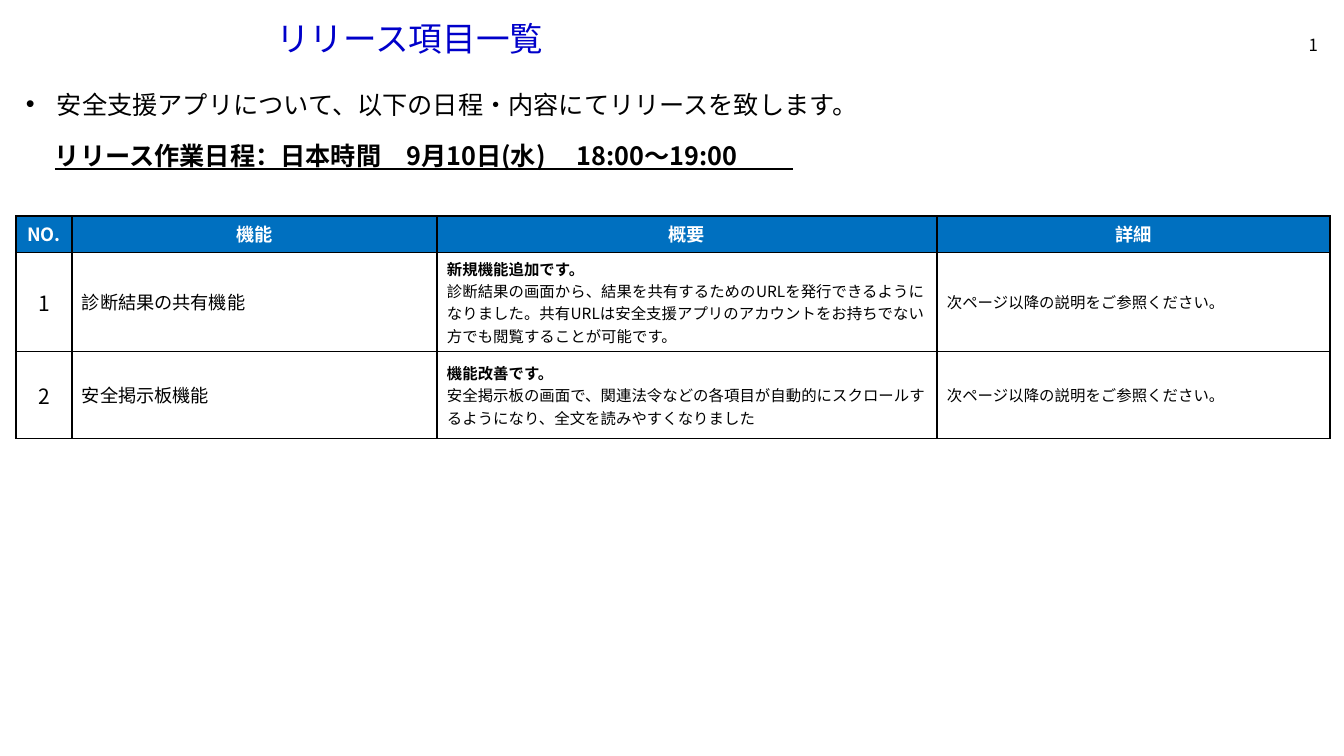
from lxml.etree import SubElement
from pptx import Presentation
from pptx.dml.color import RGBColor
from pptx.enum.text import MSO_ANCHOR, MSO_AUTO_SIZE, PP_ALIGN
from pptx.oxml.ns import qn
from pptx.util import Pt

PX = 914400 / 100.8
FONT = "Noto Sans CJK JP"
BLACK = RGBColor(0x00, 0x00, 0x00)
WHITE = RGBColor(0xFF, 0xFF, 0xFF)
TITLE_BLUE = RGBColor(0x00, 0x00, 0xCA)
HEADER_BLUE = RGBColor(0x00, 0x70, 0xC0)


def px(n):
    return round(n * PX)


class SlideBuilder:
    def __init__(self, prs):
        self.s = prs.slides.add_slide(prs.slide_layouts[5])

    def style(self, p, size, color=BLACK, bold=False, underline=False, align=PP_ALIGN.LEFT):
        p.alignment = align
        for r in p.runs:
            f = r.font
            f.name, f.size, f.bold, f.underline = FONT, Pt(size), bold, underline
            f.color.rgb = color
            SubElement(r._r.get_or_add_rPr(), qn("a:ea"), typeface=FONT)

    def frame(self, sp, text, size, anchor, **style):
        tf = sp.text_frame
        tf.text = text
        tf.word_wrap = True
        tf.auto_size = MSO_AUTO_SIZE.NONE
        tf.vertical_anchor = anchor
        p = tf.paragraphs[0]
        self.style(p, size, **style)
        return p

    def title(self, text, x, y, w, h):
        sp = self.s.shapes.title
        sp.left, sp.top, sp.width, sp.height = map(px, (x, y, w, h))
        p = self.frame(sp, text, 24, MSO_ANCHOR.MIDDLE, color=TITLE_BLUE)
        p.line_spacing = 0.9

    def text(self, text, x, y, w, h, size, bullet=False, anchor=MSO_ANCHOR.TOP, **style):
        sp = self.s.shapes.add_textbox(*map(px, (x, y, w, h)))
        p = self.frame(sp, text, size, anchor, **style)
        if bullet:
            pPr = p._p.get_or_add_pPr()
            pPr.set("marL", str(px(31)))
            pPr.set("indent", str(-px(31)))
            SubElement(pPr, qn("a:buFont"), typeface="Arial")
            SubElement(pPr, qn("a:buChar"), char="•")

    def cell(self, cell, text, sizes, fill, color=BLACK, bold=False, align=PP_ALIGN.LEFT):
        cell.text = text
        cell.vertical_anchor = MSO_ANCHOR.MIDDLE
        cell.margin_left = cell.margin_right = px(10)
        cell.margin_top = cell.margin_bottom = px(5)
        paragraphs = cell.text_frame.paragraphs
        for i, p in enumerate(paragraphs):
            # The first line of a two-line cell is its heading
            heading = len(paragraphs) > 1 and i == 0
            self.style(p, sizes, color, bold or heading, align=align)
        tcPr = cell._tc.get_or_add_tcPr()
        for side in ("lnL", "lnR", "lnT", "lnB"):
            ln = SubElement(tcPr, qn(f"a:{side}"), w=str(Pt(1)))
            solid = SubElement(ln, qn("a:solidFill"))
            SubElement(solid, qn("a:srgbClr"), val=str(BLACK))
        cell.fill.solid()
        cell.fill.fore_color.rgb = fill

    def table(self, x, y, widths, heights, header, rows):
        gf = self.s.shapes.add_table(len(heights), len(widths), px(x), px(y),
                                     px(sum(widths)), px(sum(heights)))
        tbl = gf.table
        for col, w in zip(tbl.columns, widths):
            col.width = px(w)
        for row, h in zip(tbl.rows, heights):
            row.height = px(h)
        for c, text in enumerate(header):
            self.cell(tbl.cell(0, c), text, 13, HEADER_BLUE, WHITE, True, PP_ALIGN.CENTER)
        for r, row in enumerate(rows, 1):
            for c, (text, size) in enumerate(zip(row, (15, 13, 11, 11))):
                align = PP_ALIGN.LEFT if c else PP_ALIGN.CENTER
                self.cell(tbl.cell(r, c), text, size, WHITE, align=align)


def main():
    prs = Presentation()
    prs.slide_width, prs.slide_height = px(1344), px(756)
    b = SlideBuilder(prs)

    # Title and page number
    b.title("リリース項目一覧", 266, 20, 963, 42)
    b.text("1", 1258, 30, 70, 30, 12, anchor=MSO_ANCHOR.MIDDLE, align=PP_ALIGN.RIGHT)

    # Announcement and schedule
    b.text("安全支援アプリについて、以下の日程・内容にてリリースを致します。",
           16, 84, 1298, 40, 18, bullet=True)
    b.text("リリース作業日程：日本時間\u30009月10日(水) \u300018:00～19:00\u3000 \u3000",
           45, 135, 862, 40, 18, bold=True, underline=True)

    # Release items
    details = "次ページ以降の説明をご参照ください。"
    b.table(16, 216, (56, 365, 500, 393), (35, 99, 87),
            ("NO.", "機能", "概要", "詳細"),
            (("1", "診断結果の共有機能",
              "新規機能追加です。\n診断結果の画面から、結果を共有するためのURLを発行できるように"
              "なりました。共有URLは安全支援アプリのアカウントをお持ちでない方でも閲覧することが可能です。",
              details),
             ("2", "安全掲示板機能",
              "機能改善です。\n安全掲示板の画面で、関連法令などの各項目が自動的にスクロールするようになり、"
              "全文を読みやすくなりました",
              details)))

    prs.save("out.pptx")


if __name__ == "__main__":
    main()
